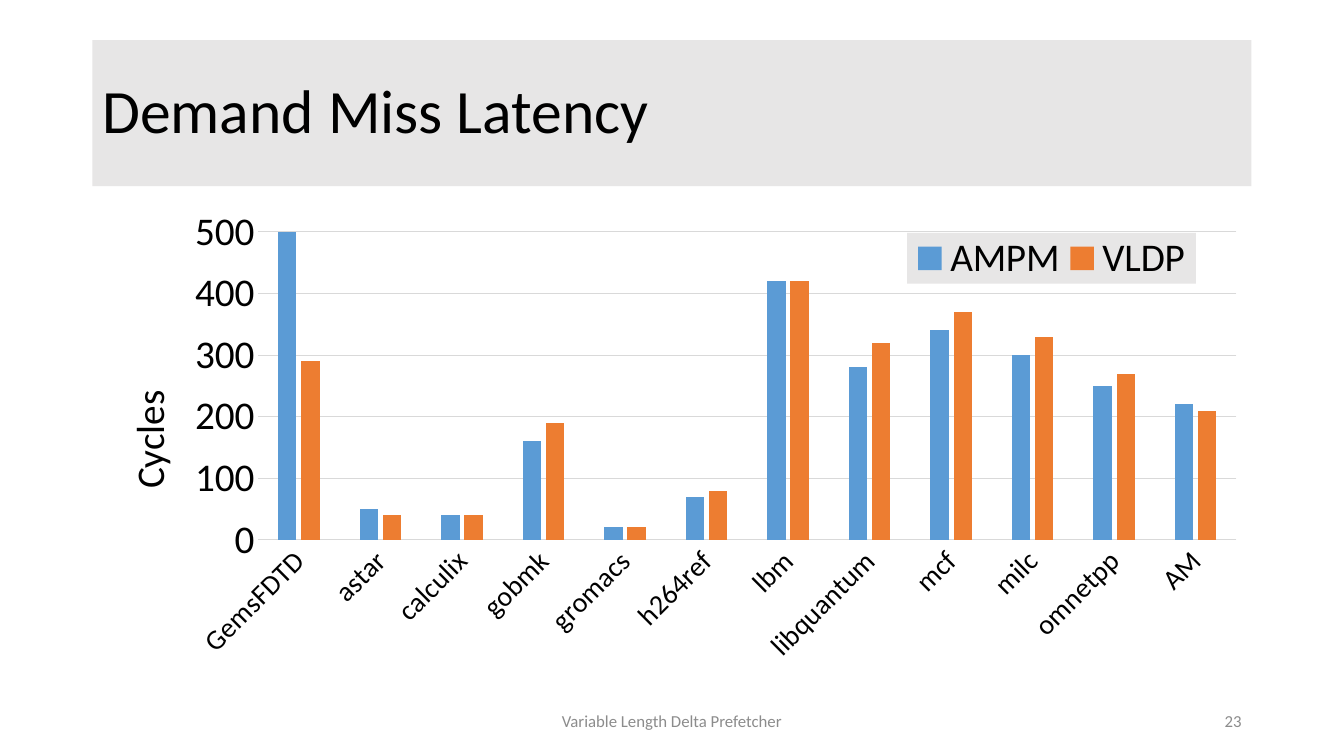
from lxml import etree
from pptx import Presentation
from pptx.chart.data import CategoryChartData
from pptx.dml.color import RGBColor
from pptx.enum import chart as charts, shapes, text
from pptx.oxml import parse_xml
from pptx.oxml.ns import nsdecls, qn
from pptx.util import Cm, Pt

FONT = "Calibri"
BLACK = RGBColor(0x00, 0x00, 0x00)
BAND = RGBColor(0xE7, 0xE6, 0xE6)
GRID = RGBColor(0xD9, 0xD9, 0xD9)
FOOTER_GREY = RGBColor(0x8C, 0x8C, 0x8C)
AMPM_BLUE = RGBColor(0x5B, 0x9B, 0xD5)
VLDP_ORANGE = RGBColor(0xED, 0x7D, 0x31)

MARGIN, CONTENT_WIDTH = 2.33, 29.21

BENCHMARKS = ["GemsFDTD", "astar", "calculix", "gobmk", "gromacs", "h264ref",
              "lbm", "libquantum", "mcf", "milc", "omnetpp", "AM"]
LATENCIES = [
    ("AMPM", AMPM_BLUE, [500, 50, 40, 160, 20, 70, 420, 280, 340, 300, 250, 220]),
    ("VLDP", VLDP_ORANGE, [290, 40, 40, 190, 20, 80, 420, 320, 370, 330, 270, 210]),
]


def style_font(font, size, color=BLACK):
    font.name, font.size, font.bold = FONT, Pt(size), False
    font.color.rgb = color


def write_line(frame, words, size, color, align):
    frame.word_wrap = True
    frame.vertical_anchor = text.MSO_ANCHOR.MIDDLE
    frame.text = words
    line = frame.paragraphs[0]
    line.alignment = align
    style_font(line.runs[0].font, size, color)
    return line


def add_title(slide, left, top, width, height):
    band = slide.shapes.add_shape(shapes.MSO_SHAPE.RECTANGLE,
                                  Cm(left), Cm(top), Cm(width), Cm(height))
    band.shadow.inherit = False
    band.fill.solid()
    band.fill.fore_color.rgb = BAND
    band.line.fill.background()
    heading = write_line(band.text_frame, "Demand Miss Latency", 44, BLACK,
                         text.PP_ALIGN.LEFT)
    heading.line_spacing = 0.9


def set_layout(parent, index, x, y, w=None, h=None, inner=False):
    """Place a chart part by fractions of the chart area."""
    for old in parent.findall(qn("c:layout")):
        parent.remove(old)
    layout = parse_xml(f"<c:layout {nsdecls('c')}><c:manualLayout/></c:layout>")
    settings = [("layoutTarget", "inner" if inner else None),
                ("xMode", "edge"), ("yMode", "edge"),
                ("x", x), ("y", y), ("w", w), ("h", h)]
    for tag, value in settings:
        if value is not None:
            etree.SubElement(layout[0], qn(f"c:{tag}")).set("val", str(value))
    parent.insert(index, layout)


def add_latency_chart(slide, left, top, width, height):
    data = CategoryChartData(number_format="0")
    data.categories = BENCHMARKS
    for name, _, cycles in LATENCIES:
        data.add_series(name, cycles)
    chart = slide.shapes.add_chart(
        charts.XL_CHART_TYPE.COLUMN_CLUSTERED,
        Cm(left), Cm(top), Cm(width), Cm(height), data).chart
    chart.has_title = False
    style_font(chart.font, 28)
    space = chart.font._element.getroottree().getroot()
    set_layout(space.find(f".//{qn('c:plotArea')}"), 0,
               0.143, 0.064, 0.844, 0.642, inner=True)

    # Columns
    plot = chart.plots[0]
    plot.gap_width, plot.overlap, plot.vary_by_categories = 219, -27, False
    for series, (_, color, _) in zip(plot.series, LATENCIES):
        series.format.fill.solid()
        series.format.fill.fore_color.rgb = color
        series.invert_if_negative = False

    # Axes
    benchmarks, cycles = chart.category_axis, chart.value_axis
    for axis, size in ((benchmarks, 20), (cycles, 28)):
        axis.major_tick_mark = axis.minor_tick_mark = charts.XL_TICK_MARK.NONE
        style_font(axis.tick_labels.font, size)
    slant = space.find(f".//{qn('c:catAx')}/{qn('c:txPr')}/{qn('a:bodyPr')}")
    slant.set("rot", "-2700000")
    slant.set("vert", "horz")
    cycles.minimum_scale, cycles.maximum_scale, cycles.major_unit = 0, 500, 100
    cycles.tick_labels.number_format = "0"
    cycles.tick_labels.number_format_is_linked = False
    cycles.has_major_gridlines = True
    for line in (benchmarks.format.line, cycles.major_gridlines.format.line):
        line.color.rgb, line.width = GRID, Pt(0.75)
    cycles.format.line.fill.background()

    # Value axis title
    caption = cycles.axis_title.text_frame
    caption.text = "Cycles"
    style_font(caption.paragraphs[0].runs[0].font, 28)
    turn = space.find(f".//{qn('c:valAx')}/{qn('c:title')}//{qn('a:bodyPr')}")
    turn.set("rot", "-5400000")
    turn.set("vert", "horz")
    set_layout(space.find(f".//{qn('c:valAx')}/{qn('c:title')}"), 1, 0.02, 0.38)

    # Legend on a grey panel
    chart.has_legend = True
    chart.legend.position = charts.XL_LEGEND_POSITION.BOTTOM
    chart.legend.include_in_layout = False
    style_font(chart.legend.font, 28)
    legend = space.find(f".//{qn('c:legend')}")
    set_layout(legend, 1, 0.703, 0.066, 0.249, 0.106)
    panel = parse_xml(f'<c:spPr {nsdecls("c", "a")}><a:solidFill>'
                      f'<a:srgbClr val="{BAND}"/></a:solidFill></c:spPr>')
    legend.find(qn("c:txPr")).addprevious(panel)


def add_footer(slide, left, top, width, height):
    title_width, number_width = 11.43, 7.62
    parts = [
        ("Variable Length Delta Prefetcher", left + (width - title_width) / 2,
         title_width, text.PP_ALIGN.CENTER),
        ("23", left + width - number_width, number_width, text.PP_ALIGN.RIGHT),
    ]
    for words, x, part_width, align in parts:
        box = slide.shapes.add_textbox(Cm(x), Cm(top), Cm(part_width), Cm(height))
        write_line(box.text_frame, words, 12, FOOTER_GREY, align)


def main():
    deck = Presentation()
    deck.slide_width, deck.slide_height = Cm(33.87), Cm(19.05)
    slide = deck.slides.add_slide(deck.slide_layouts[6])
    add_title(slide, MARGIN, 1.01, CONTENT_WIDTH, 3.68)
    add_latency_chart(slide, MARGIN, 5.07, CONTENT_WIDTH, 12.09)
    add_footer(slide, MARGIN, 17.66, CONTENT_WIDTH, 1.01)
    deck.save("out.pptx")


if __name__ == "__main__":
    main()
